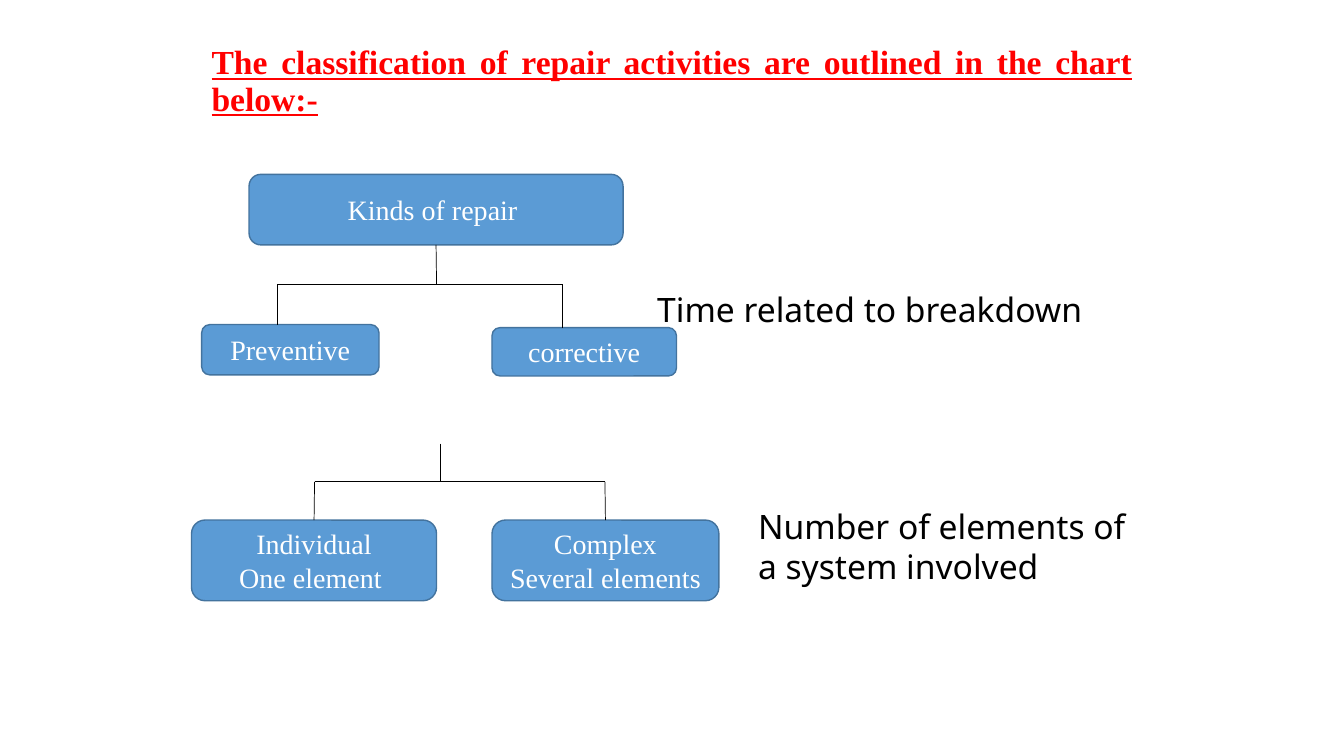
import pptx
import pptx.util
import pptx.dml.color
import pptx.enum.shapes
import pptx.enum.text
import pptx.oxml

RGBColor = pptx.dml.color.RGBColor
Inches = pptx.util.Inches
ALIGN = pptx.enum.text.PP_ALIGN
ANCHOR = pptx.enum.text.MSO_ANCHOR

RED = RGBColor(0xFF, 0x00, 0x00)
BLACK = RGBColor(0x00, 0x00, 0x00)
WHITE = RGBColor(0xFF, 0xFF, 0xFF)
BLUE = RGBColor(0x5B, 0x9B, 0xD5)
DARK_BLUE = RGBColor(0x43, 0x73, 0x9E)

# Content: places are left, top, width, height in inches
HEADING = ("The classification of repair activities are outlined in the chart below:-",
           (2, 0.3, 9.33, 1.03))
KINDS = {
    "root": (["Kinds of repair "], (2.47, 1.73, 3.71, 0.7)),
    "preventive": (["Preventive"], (2, 3.22, 1.76, 0.5)),
    "corrective": (["corrective"], (4.88, 3.25, 1.83, 0.48)),
    "individual": (["Individual", "One element "], (1.9, 5.16, 2.43, 0.8)),
    "complex": (["Complex", "Several elements"], (4.88, 5.16, 2.25, 0.8)),
}
CRITERIA = [
    ("Time related to breakdown", (6.42, 2.82, 5.04, 0.5)),
    ("Number of elements of a system involved", (7.42, 4.97, 3.92, 0.91)),
]
# Each branch: stem x, stem top, bar y, parent, drops as (x, child, joined at its middle)
BRANCHES = [
    (4.33, 2.43, 2.82, "root",
     [(2.75, "preventive", False), (5.58, "corrective", False)]),
    (4.37, 4.4, 4.78, None,
     [(3.12, "individual", True), (6, "complex", True)]),
]

HEADING_FONT = {"name": "Times New Roman", "size": pptx.util.Pt(24),
                "bold": True, "underline": True}
KIND_FONT = {"name": "Times New Roman", "size": pptx.util.Pt(20)}
CRITERION_FONT = {"name": "Noto Sans", "size": pptx.util.Pt(24)}

deck = pptx.Presentation()
deck.slide_width, deck.slide_height = Inches(13.33), Inches(7.5)
slide = deck.slides.add_slide(deck.slide_layouts[6])


def write(holder, lines, font, color, align, anchor, spacing=None):
    frame = holder.text_frame
    frame.word_wrap = True
    frame.vertical_anchor = anchor
    frame.text = "\n".join(lines)
    for paragraph in frame.paragraphs:
        paragraph.alignment = align
        paragraph.line_spacing = spacing
        for key, value in font.items():
            setattr(paragraph.font, key, value)
        paragraph.font.color.rgb = color


def add_label(text, place, *style):
    label = slide.shapes.add_textbox(*map(Inches, place))
    write(label, [text], *style)


def add_kind(lines, place):
    kind = slide.shapes.add_shape(
        pptx.enum.shapes.MSO_SHAPE.ROUNDED_RECTANGLE, *map(Inches, place))
    kind.shadow.inherit = False
    kind.fill.solid()
    kind.fill.fore_color.rgb = BLUE
    kind.line.color.rgb = DARK_BLUE
    kind.line.width = pptx.util.Pt(1)
    write(kind, lines, KIND_FONT, WHITE, ALIGN.CENTER, ANCHOR.MIDDLE)
    return kind


def add_line(x1, y1, x2, y2):
    line = slide.shapes.add_connector(
        pptx.enum.shapes.MSO_CONNECTOR.STRAIGHT, *map(Inches, (x1, y1, x2, y2)))
    line.line.color.rgb = BLACK
    line.line.width = pptx.util.Pt(0.5)
    line._element.spPr.append(pptx.oxml.parse_xml(
        '<a:effectLst xmlns:a="http://schemas.openxmlformats.org/drawingml/2006/main"/>'))
    return line


# Heading
add_label(*HEADING, HEADING_FONT, RED, ALIGN.JUSTIFY, ANCHOR.MIDDLE, 0.9)

# Boxes
kinds = {key: add_kind(*content) for key, content in KINDS.items()}

# Branches: stem, bar and a drop to each child
for stem_x, stem_top, bar_y, parent, drops in BRANCHES:
    stem = add_line(stem_x, stem_top, stem_x, bar_y)
    if parent:
        stem.begin_connect(kinds[parent], 2)
    add_line(drops[0][0], bar_y, drops[-1][0], bar_y)
    for x, child, joined in drops:
        drop = add_line(x, bar_y, x, KINDS[child][1][1])
        if joined:
            drop.end_connect(kinds[child], 0)

# Criteria beside each branch
for text, place in CRITERIA:
    add_label(text, place, CRITERION_FONT, BLACK, ALIGN.LEFT, ANCHOR.TOP)

deck.save("out.pptx")
